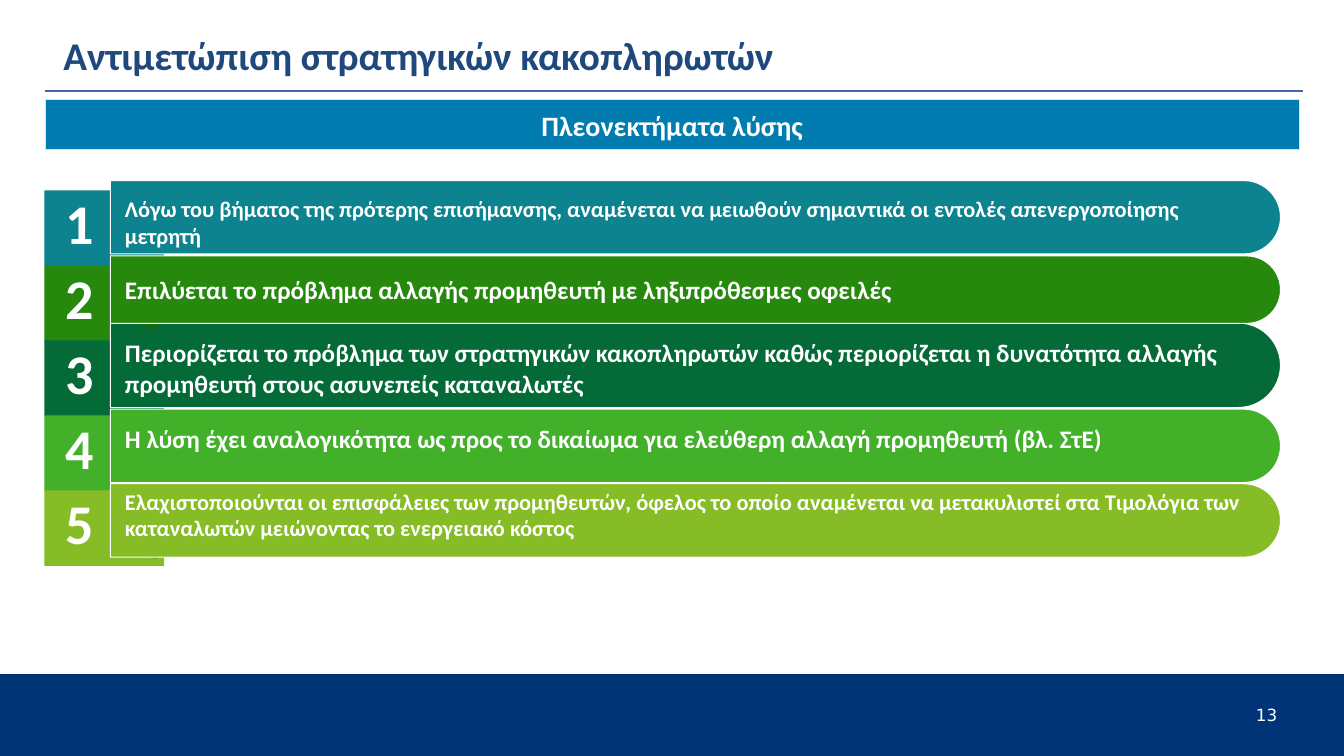
from dataclasses import dataclass

from pptx import Presentation
from pptx.dml.color import RGBColor
from pptx.enum.shapes import MSO_CONNECTOR, MSO_SHAPE
from pptx.enum.text import MSO_ANCHOR, MSO_AUTO_SIZE, PP_ALIGN
from pptx.oxml.ns import qn
from pptx.util import Cm, Pt
from lxml import etree

RECT = MSO_SHAPE.RECTANGLE
ROUND = MSO_SHAPE.ROUND_2_SAME_RECTANGLE
WEDGE = MSO_SHAPE.ISOSCELES_TRIANGLE
STRAIGHT = MSO_CONNECTOR.STRAIGHT
LEFT, CENTER = PP_ALIGN.LEFT, PP_ALIGN.CENTER
TOP, MIDDLE = MSO_ANCHOR.TOP, MSO_ANCHOR.MIDDLE
GROW, FIXED = MSO_AUTO_SIZE.SHAPE_TO_FIT_TEXT, MSO_AUTO_SIZE.NONE


@dataclass(frozen=True)
class Theme:
    font: str = "Calibri"
    page_font: str = "DejaVu Sans"
    white: str = "FFFFFF"
    title: str = "1F497D"
    rule: str = "4966AC"
    banner: str = "007CB0"
    edge: str = "E3E3E2"
    footer: str = "003476"
    title_size: int = 28
    banner_size: int = 20
    digit_size: int = 40
    page_size: int = 12
    thin: float = 0.75


@dataclass(frozen=True)
class Row:
    text: str
    size: int
    fill: str
    dark: str
    top: float      # bar top, from the top of the list
    height: float   # bar height
    pad: float      # text top, from the bar top
    width: float    # text width
    fold: tuple     # wedge middle (from the tile top) and height


THEME = Theme()
ROWS = [
    Row("Λόγω του βήματος της πρότερης επισήμανσης, αναμένεται να μειωθούν "
        "σημαντικά οι εντολές απενεργοποίησης μετρητή",
        16, "0D8390", "0A626C", 0, 1.85, 0.38, 26.8, (1.27, 0.69)),
    Row("Επιλύεται το πρόβλημα αλλαγής προμηθευτή με ληξιπρόθεσμες οφειλές",
        18, "26890D", "1C670A", 1.9, 1.7, 0.46, 27.94, (1.27, 0.69)),
    Row("Περιορίζεται το πρόβλημα των στρατηγικών κακοπληρωτών καθώς "
        "περιορίζεται η δυνατότητα αλλαγής προμηθευτή στους ασυνεπείς "
        "καταναλωτές",
        18, "046A38", "02351C", 3.59, 2.13, 0.37, 29.13, (1.37, 0.69)),
    Row("Η λύση έχει αναλογικότητα ως προς το δικαίωμα για ελεύθερη αλλαγή "
        "προμηθευτή (βλ. ΣτΕ)",
        18, "43B02A", "328420", 5.76, 1.85, 0.36, 26.8, (1.35, 0.76)),
    Row("Ελαχιστοποιούνται οι επισφάλειες των προμηθευτών, όφελος το οποίο "
        "αναμένεται να μετακυλιστεί στα Τιμολόγια των καταναλωτών μειώνοντας "
        "το ενεργειακό κόστος",
        16, "86BC25", "658D1C", 7.64, 1.85, 0.10, 28.37, (1.35, 0.76)),
]
STACK = (2, 3, 4, 1, 0)  # drawing order of the bars, back to front


def color(code):
    return RGBColor.from_string(code)


def apply(target, values):
    for name, value in values.items():
        setattr(target, name, value)


def shape(slide, kind, box, fill, line=None, turn=0):
    """Place a shape so that it covers box once it is turned."""
    x, y, w, h = box
    if turn in (90, 270):
        x, y, w, h = x + (w - h) / 2, y + (h - w) / 2, h, w
    item = slide.shapes.add_shape(kind, Cm(x), Cm(y), Cm(w), Cm(h))
    item.rotation = turn
    item.shadow.inherit = False
    item.fill.solid()
    item.fill.fore_color.rgb = color(fill)
    if line:
        item.line.color.rgb = color(line)
        item.line.width = Pt(THEME.thin)
    else:
        item.line.fill.background()
    return item


def write(item, text, size, tint=THEME.white, font=THEME.font, bold=True,
          align=LEFT, anchor=TOP, fit=GROW, inset=(0, 0), spacing=None):
    frame = item.text_frame
    side, edge = Cm(inset[0]), Cm(inset[1])
    apply(frame, {"word_wrap": True, "auto_size": fit,
                  "vertical_anchor": anchor, "margin_left": side,
                  "margin_right": side, "margin_top": edge,
                  "margin_bottom": edge})
    para = frame.paragraphs[0]
    apply(para, {"alignment": align, "line_spacing": spacing})
    run = para.add_run()
    run.text = text
    apply(run.font, {"name": font, "size": Pt(size), "bold": bold})
    run.font.color.rgb = color(tint)


def label(slide, box, text, size, **style):
    item = slide.shapes.add_textbox(*(Cm(v) for v in box))
    write(item, text, size, **style)


def footer(slide, box):
    x, y, w, h = box
    shape(slide, RECT, box, THEME.footer)
    label(slide, (x + w - 2.22, y + 0.84, 1.17, 0.36), "13", THEME.page_size,
          font=THEME.page_font, bold=False, spacing=0.87)


def header(slide, box):
    x, y, w, h = box
    # Title and the rule below it
    label(slide, (x + 0.46, y, w - 0.1, 1.47),
          "Αντιμετώπιση στρατηγικών κακοπληρωτών", THEME.title_size,
          tint=THEME.title, anchor=MIDDLE, fit=FIXED)
    rule = slide.shapes.add_connector(
        STRAIGHT, Cm(x), Cm(y + 1.65), Cm(x + w), Cm(y + 1.65))
    rule.line.color.rgb = color(THEME.rule)
    rule.line.width = Pt(0.96)
    etree.SubElement(rule.element.spPr, qn("a:effectLst"))
    # Banner
    band = shape(slide, RECT, (x, y + h - 1.27, w - 0.1, 1.27),
                 THEME.banner, THEME.edge)
    write(band, "Πλεονεκτήματα λύσης", THEME.banner_size, align=CENTER,
          anchor=MIDDLE, inset=(0.25, 0.2))


def ribbons(slide, box):
    x, y, w, h = box
    first, pitch, tile = 0.25, 1.89, 3.02
    start = 1.66  # left edge of the bars
    tops = [y + first + pitch * i for i in range(len(ROWS))]
    # Number tiles
    for row, top in zip(ROWS, tops):
        shape(slide, RECT, (x, top, tile, 1.9), row.fill)
    # Folds and bars
    for i in STACK:
        row = ROWS[i]
        mid, tall = row.fold
        shape(slide, WEDGE, (x + start, tops[i] + mid - tall / 2, 1.17, tall),
              row.dark, turn=270)
        bar = shape(slide, ROUND,
                    (x + start, y + row.top, w - start, row.height),
                    row.fill, THEME.white, turn=90)
        bar.adjustments[0], bar.adjustments[1] = 0.5, 0
    # Numbers and wording
    for i, (row, top) in enumerate(zip(ROWS, tops), 1):
        label(slide, (x + 0.1, top - 0.06, 1.57, 1.7), str(i),
              THEME.digit_size, align=CENTER)
        label(slide, (x + start + 0.37, y + row.top + row.pad, row.width, 1),
              row.text, row.size)


def main():
    deck = Presentation()
    deck.slide_width, deck.slide_height = Cm(33.87), Cm(19.05)
    slide = deck.slides.add_slide(deck.slide_layouts[6])
    footer(slide, (0, 16.99, 33.87, 2.06))
    ribbons(slide, (1.12, 4.55, 31.15, 9.7))
    header(slide, (1.14, 0.64, 31.7, 3.14))
    deck.save("out.pptx")


if __name__ == "__main__":
    main()
